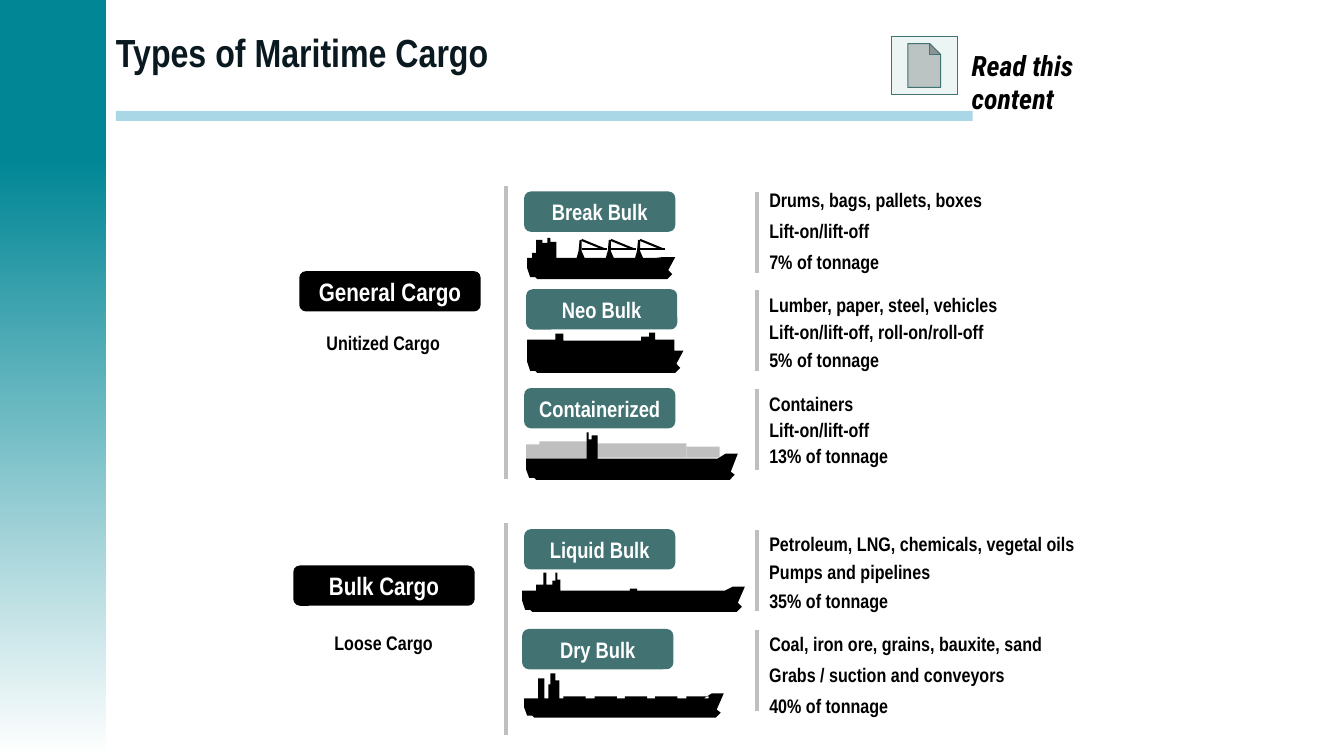
from lxml import etree
from pptx import Presentation
from pptx.dml.color import RGBColor
from pptx.enum.shapes import MSO_CONNECTOR, MSO_SHAPE
from pptx.enum.text import MSO_ANCHOR, PP_ALIGN
from pptx.oxml.ns import qn
from pptx.util import Pt

TEAL = RGBColor(0x00, 0x86, 0x95)
GREEN = RGBColor(0x42, 0x72, 0x72)
PALE = RGBColor(0xEC, 0xF4, 0xF4)
SKY = RGBColor(0xAA, 0xD7, 0xE6)
GRAY = RGBColor(0xBF, 0xBF, 0xBF)
INK = RGBColor(0x09, 0x19, 0x1F)
BLACK = RGBColor(0, 0, 0)
WHITE = RGBColor(255, 255, 255)
FONT = "Arial Narrow"
UNIT = 0.72

TITLE = "Types of Maritime Cargo"
GROUPS = [
    ("General Cargo", 213.8, 193.7, "Unitized Cargo", 226.1, 232.6, 133.2, 342),
    ("Bulk Cargo", 209.5, 403.9, "Loose Cargo", 231.8, 447.1, 373.7, 524.9),
]
KINDS = [
    ("Break Bulk", 374.4, 136.8, 131, 22,
     ["Drums, bags, pallets, boxes", "Lift-on/lift-off", "7% of tonnage"]),
    ("Neo Bulk", 375.8, 206.6, 205.9, 19.4,
     ["Lumber, paper, steel, vehicles", "Lift-on/lift-off, roll-on/roll-off", "5% of tonnage"]),
    ("Containerized", 374.4, 277.2, 276.2, 18.6,
     ["Containers", "Lift-on/lift-off", "13% of tonnage"]),
    ("Liquid Bulk", 374.4, 378, 376.6, 20.1,
     ["Petroleum, LNG, chemicals, vegetal oils", "Pumps and pipelines", "35% of tonnage"]),
    ("Dry Bulk", 373, 449.3, 447.8, 22.3,
     ["Coal, iron ore, grains, bauxite, sand", "Grabs / suction and conveyors",
      "40% of tonnage"]),
]
HATCHES = [(559 + 30.5 * i, 691, 22) for i in range(5)]
SHIPS = [
    (523, 670, 256, 277, 1, [(528, 251, 4), (532, 238, 6), (538, 241, 5), (543, 236, 3),
                             (546, 240, 6)]),
    (523, 678, 348, 370, 0, [(523, 337, 28), (551, 331, 8), (559, 338, 77), (636, 334, 8),
                             (644, 330, 6), (650, 337, 19)]),
    (522, 732, 455, 476, 5, [(582, 429, 2), (584, 436, 3), (587, 432, 6)]),
    (518, 739, 586, 607, 4, [(532, 580, 7), (539, 568, 3), (542, 580, 6), (548, 576, 3),
                             (551, 568, 2), (553, 575, 3), (625, 584, 7)]),
    (520, 718, 693, 712, 5, [(534, 673, 6), (544, 679, 2), (546, 668, 5), (551, 675, 4)]
     + HATCHES),
]
STACKS = [(522, 441, 61, 17), (535, 438, 48, 5), (591, 440, 90, 14), (681, 443, 33, 11)]
MASTS = [572, 601, 630]

prs = Presentation()
prs.slide_width, prs.slide_height = Pt(960), Pt(540)
slide = prs.slides.add_slide(prs.slide_layouts[5])
tree = slide.shapes


def paint(form, color):
    form.shadow.inherit = False
    form.fill.solid()
    form.fill.fore_color.rgb = color
    form.line.fill.background()
    return form


def block(kind, x, y, w, h, color):
    return paint(tree.add_shape(kind, Pt(x), Pt(y), Pt(w), Pt(h)), color)


def write(frame, words, size, color, face=FONT):
    para = frame.paragraphs[0]
    para.text = words
    font = para.font
    font.name, font.size, font.bold = face, Pt(size), True
    font.color.rgb = color
    return para


def pill(words, x, y, w, size, color):
    frame = block(MSO_SHAPE.ROUNDED_RECTANGLE, x, y, w, 28.8, color).text_frame
    frame.margin_left = frame.margin_right = Pt(3.6)
    frame.vertical_anchor = MSO_ANCHOR.MIDDLE
    write(frame, words, size, WHITE).alignment = PP_ALIGN.CENTER


def label(words, x, y):
    wide = 20 + sum(4 if mark in "fijlrt-/, " else 7 for mark in words)
    frame = tree.add_textbox(Pt(x), Pt(y), Pt(wide), Pt(24.5)).text_frame
    frame.word_wrap = True
    write(frame, words, 14, BLACK)


def rule(x1, y1, x2, y2, color=GRAY, width=3):
    line = tree.add_connector(MSO_CONNECTOR.STRAIGHT, Pt(x1), Pt(y1), Pt(x2), Pt(y2))
    line.line.color.rgb = color
    line.line.width = Pt(width)
    etree.SubElement(line._element.spPr, qn("a:effectLst"))


def outline(dots):
    pen = tree.build_freeform(*dots[0], scale=Pt(UNIT))
    pen.add_line_segments(dots[1:], close=True)
    paint(pen.convert_to_shape(), BLACK)


def ship(left, right, deck, keel, rise, towers):
    mid = (deck + keel) / 2
    dots = [(left, deck)]
    for x, top, w in towers:
        dots += [(x, deck), (x, top), (x + w, top), (x + w, deck)]
    dots += [(right - 20, deck), (right - 12, deck - rise), (right, deck - rise),
             (right - 7, mid + 2), (right - 3, keel - 5), (right - 8, keel),
             (left + 10, keel), (left + 8, keel - 2), (left + 3, keel - 2), (left, mid)]
    outline(dots)


block(MSO_SHAPE.RECTANGLE, -1.4, -0.7, 77, 113.7, TEAL)
fade = block(MSO_SHAPE.RECTANGLE, -1.4, 113, 77, 427, TEAL).fill
fade.gradient()
fade.gradient_angle = 270
for stop, color, place in zip(fade.gradient_stops, (TEAL, WHITE), (0, 1)):
    stop.color.rgb = color
    stop.position = place
block(MSO_SHAPE.RECTANGLE, 82.8, 79.2, 612, 7.2, SKY)

title = tree.title
title.left, title.top, title.width, title.height = Pt(75.6), Pt(0.7), Pt(862.6), Pt(72)
title.text_frame.vertical_anchor = MSO_ANCHOR.MIDDLE
write(title.text_frame, TITLE, 28, INK).alignment = PP_ALIGN.LEFT

for name, x, y, note, left, top, start, end in GROUPS:
    pill(name, x, y, 129.6, 18, BLACK)
    label(note, left, top)
    rule(361.4, start, 361.4, end)

for name, x, y, top, step, facts in KINDS:
    pill(name, x, y, 108, 16, GREEN)
    rule(540.7, y + 0.7, 540.7, y + 58.3)
    for row, words in enumerate(facts):
        label(words, 542.4, top + row * step)

for stack in STACKS:
    block(MSO_SHAPE.RECTANGLE, *[n * UNIT for n in stack], GRAY)
for parts in SHIPS:
    ship(*parts)
for x in MASTS:
    outline([(x, 256), (x + 2, 249), (x + 3, 238), (x + 5, 238), (x + 5, 249), (x + 8, 256)])
    for start, reach in ((238, 27), (247, 30)):
        rule((x + 5) * UNIT, start * UNIT, (x + reach) * UNIT, 247 * UNIT, BLACK, 1.5)

icon = block(MSO_SHAPE.ACTION_BUTTON_DOCUMENT, 636.5, 25.9, 47.5, 41.8, PALE)
icon.line.color.rgb = GREEN
icon.line.width = Pt(0.75)
hint = tree.add_textbox(Pt(686.9), Pt(31), Pt(133.9), Pt(31.7)).text_frame
hint.word_wrap = True
write(hint, "Read this content", 20, BLACK, "Roboto Condensed").font.italic = True

prs.save("out.pptx")
